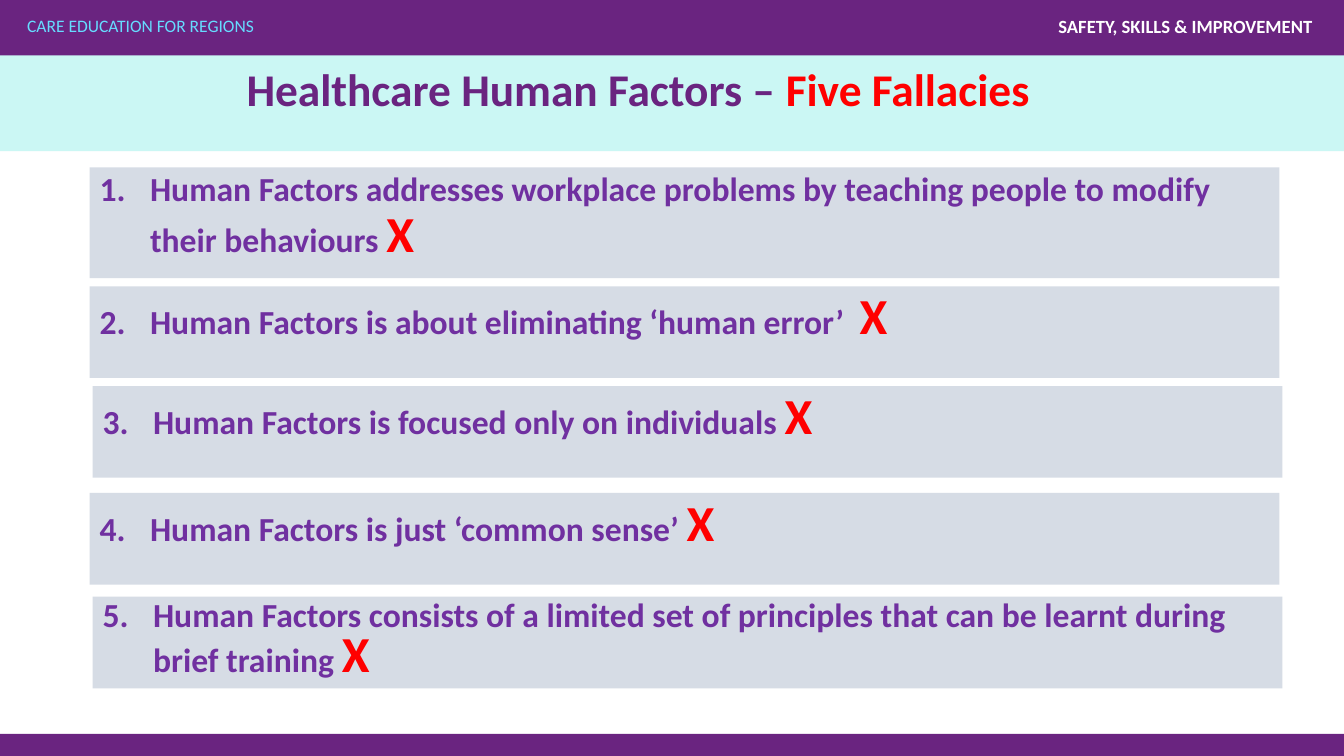
from lxml.etree import SubElement
from pptx import Presentation
from pptx.dml.color import RGBColor
from pptx.enum.shapes import MSO_SHAPE
from pptx.enum.text import MSO_ANCHOR, PP_ALIGN
from pptx.oxml.ns import qn
from pptx.util import Inches, Pt

WIDE, HIGH = 13.33, 7.5
COLORS = {
    "purple": "6A2480", "mint": "CBF7F4", "sky": "66DCFF", "white": "FFFFFF",
    "red": "FF0000", "violet": "7030A0", "grey": "D6DCE5",
}
# Wording, left shift, top and height of the bar, line spacing
FALLACIES = [
    ("Human Factors addresses workplace problems by teaching people to modify "
     "their behaviours ", 0, 1.66, 1.1, 0.9),
    ("Human Factors is about eliminating ‘human error’  ", 0, 2.84, 0.91, 0.9),
    ("Human Factors is focused only on individuals ", 0.03, 3.83, 0.91, 0.9),
    ("Human Factors is just ‘common sense’ ", 0, 4.89, 0.91, 0.9),
    ("Human Factors consists of a limited set of principles that can be learnt "
     "during brief training ", 0.03, 5.92, 0.91, 0.8),
]


def color(name):
    return RGBColor.from_string(COLORS[name])


def add_bar(slide, box, fill):
    bar = slide.shapes.add_shape(MSO_SHAPE.RECTANGLE, *map(Inches, box))
    bar.shadow.inherit = False
    bar.fill.solid()
    bar.fill.fore_color.rgb = color(fill)
    bar.line.fill.background()
    return bar


def add_box(slide, box):
    return slide.shapes.add_textbox(*map(Inches, box))


def write(shape, *runs, bold=True, align=PP_ALIGN.LEFT, anchor=MSO_ANCHOR.TOP,
          inset=None, spacing=None, before=None):
    """Fill the shape with one paragraph of (text, size, color) runs."""
    frame = shape.text_frame
    frame.word_wrap = True
    frame.vertical_anchor = anchor
    if inset is not None:
        frame.margin_left = frame.margin_right = Inches(inset)
        frame.margin_top = frame.margin_bottom = Inches(inset)
    par = frame.paragraphs[0]
    par.alignment = align
    if spacing:
        par.line_spacing = spacing
    if before:
        par.space_before = Pt(before)
    for text, size, tint in runs:
        run = par.add_run()
        run.text = text
        run.font.name = "Calibri"
        run.font.size = Pt(size)
        run.font.bold = bold
        run.font.color.rgb = color(tint)
    return par


def number(par, start, indent=0.5):
    """Give the paragraph an automatic number and a hanging indent."""
    props = par._p.get_or_add_pPr()
    props.set("marL", str(Inches(indent)))
    props.set("indent", str(-Inches(indent)))
    SubElement(props, qn("a:buFont"), typeface="+mj-lt")
    SubElement(props, qn("a:buAutoNum"), type="arabicPeriod", startAt=str(start))


def add_header(slide, left, top, width, height):
    add_bar(slide, (left, top, width, height), "mint")
    add_bar(slide, (left, top, width, 0.57), "purple")
    write(add_box(slide, (left + 0.27, top + 0.17, 5.47, 0.21)),
          ("CARE EDUCATION FOR REGIONS", 12.5, "sky"), bold=False, inset=0)
    write(add_box(slide, (left + width - 6.28, top + 0.17, 5.97, 0.22)),
          ("SAFETY, SKILLS & IMPROVEMENT", 13.3, "white"),
          align=PP_ALIGN.RIGHT, inset=0)
    write(add_box(slide, (left + 0.63, top + 0.63, 11.5, 0.6)),
          ("Healthcare Human Factors – ", 32.4, "purple"),
          ("Five Fallacies ", 32.4, "red"),
          align=PP_ALIGN.CENTER, anchor=MSO_ANCHOR.MIDDLE, spacing=0.9)


def add_list(slide, left, width):
    for count, (text, shift, top, height, spacing) in enumerate(FALLACIES, 1):
        bar = add_bar(slide, (left + shift, top, width, height), "grey")
        par = write(bar, (text, 24, "violet"), ("X", 36, "red"),
                    spacing=spacing, before=10)
        number(par, count)


def main():
    deck = Presentation()
    deck.slide_width, deck.slide_height = Inches(WIDE), Inches(HIGH)
    slide = deck.slides.add_slide(deck.slide_layouts[6])
    add_header(slide, 0, -0.02, WIDE, 1.52)
    add_bar(slide, (0, HIGH - 0.22, WIDE, 0.23), "purple")
    add_list(slide, 0.89, 11.8)
    deck.save("out.pptx")


if __name__ == "__main__":
    main()
